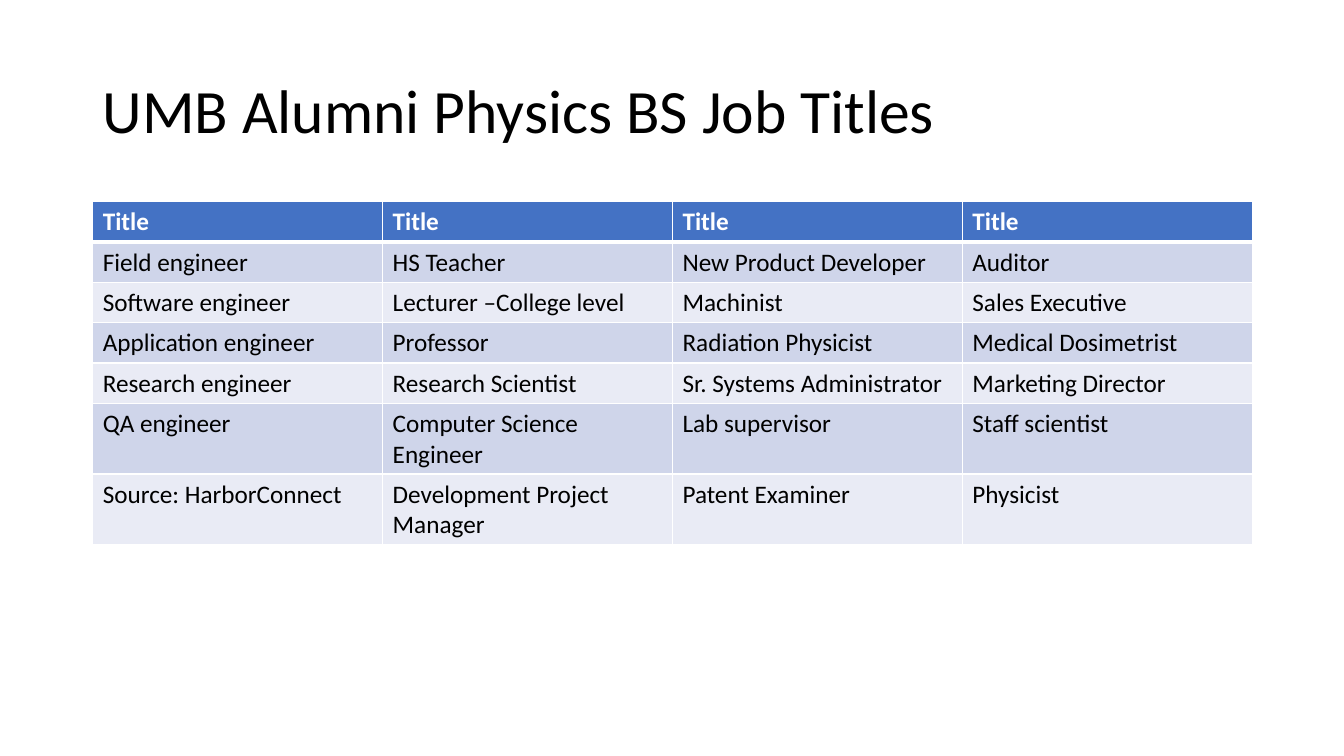
from lxml.etree import SubElement
from pptx import Presentation
from pptx.dml.color import RGBColor
from pptx.enum.text import MSO_ANCHOR
from pptx.oxml.ns import qn
from pptx.util import Inches, Pt

BLACK = RGBColor(0x00, 0x00, 0x00)
WHITE = RGBColor(0xFF, 0xFF, 0xFF)
HEADER_BLUE = RGBColor(0x44, 0x72, 0xC4)
BAND_DARK = RGBColor(0xCF, 0xD5, 0xEA)
BAND_LIGHT = RGBColor(0xE9, 0xEB, 0xF5)

JOB_TITLES = [
    ["Title"] * 4,
    ["Field engineer", "HS Teacher", "New Product Developer", "Auditor"],
    ["Software engineer", "Lecturer –College level", "Machinist", "Sales Executive"],
    ["Application engineer", "Professor", "Radiation Physicist", "Medical Dosimetrist"],
    ["Research engineer", "Research Scientist", "Sr. Systems Administrator", "Marketing Director"],
    ["QA engineer", "Computer Science Engineer", "Lab supervisor", "Staff scientist"],
    ["Source: HarborConnect", "Development Project Manager", "Patent Examiner", "Physicist"],
]


class SlideBuilder:
    font_name = "Calibri"
    thin_border = 1
    thick_border = 3

    def __init__(self, slide):
        self.slide = slide

    def add_text(self, paragraph, text, size, color, bold=False):
        run = paragraph.add_run()
        run.text = text
        font_format = {"name": self.font_name, "size": Pt(size), "bold": bold}
        for attribute, value in font_format.items():
            setattr(run.font, attribute, value)
        run.font.color.rgb = color

    def title(self, text, left, top, width, height):
        box = self.slide.shapes.add_textbox(
            Inches(left), Inches(top), Inches(width), Inches(height)
        )
        frame_format = {"word_wrap": True, "vertical_anchor": MSO_ANCHOR.MIDDLE}
        for attribute, value in frame_format.items():
            setattr(box.text_frame, attribute, value)
        paragraph = box.text_frame.paragraphs[0]
        paragraph.line_spacing = 0.9
        self.add_text(paragraph, text, 44, BLACK)

    def borders(self, cell, top, bottom):
        properties = cell._tc.get_or_add_tcPr()
        widths = {
            "a:lnL": self.thin_border,
            "a:lnR": self.thin_border,
            "a:lnT": top,
            "a:lnB": bottom,
        }
        for tag, width in widths.items():
            line = SubElement(properties, qn(tag), w=str(Pt(width)))
            fill = SubElement(line, qn("a:solidFill"))
            SubElement(fill, qn("a:srgbClr"), val=str(WHITE))

    def table(self, rows, left, top, width, row_height):
        column_count = len(rows[0])
        table = self.slide.shapes.add_table(
            len(rows), column_count, Inches(left), Inches(top),
            Inches(width), Inches(row_height * len(rows)),
        ).table
        for column in table.columns:
            column.width = Inches(width / column_count)
        for row_index, texts in enumerate(rows):
            is_header = row_index == 0
            band = BAND_DARK if row_index % 2 else BAND_LIGHT
            top_border = self.thick_border if row_index == 1 else self.thin_border
            bottom_border = self.thick_border if is_header else self.thin_border
            for column_index, text in enumerate(texts):
                cell = table.cell(row_index, column_index)
                self.borders(cell, top_border, bottom_border)
                cell.fill.solid()
                cell.fill.fore_color.rgb = HEADER_BLUE if is_header else band
                color = WHITE if is_header else BLACK
                self.add_text(cell.text_frame.paragraphs[0], text, 18, color, is_header)


def main():
    presentation = Presentation()
    presentation.slide_width = Inches(13.33)
    presentation.slide_height = Inches(7.5)
    slide = presentation.slides.add_slide(presentation.slide_layouts[6])
    builder = SlideBuilder(slide)
    builder.title("UMB Alumni Physics BS Job Titles", 0.92, 0.4, 11.5, 1.45)
    builder.table(JOB_TITLES, 0.92, 2, 11.5, 0.4)
    presentation.save("out.pptx")


if __name__ == "__main__":
    main()
